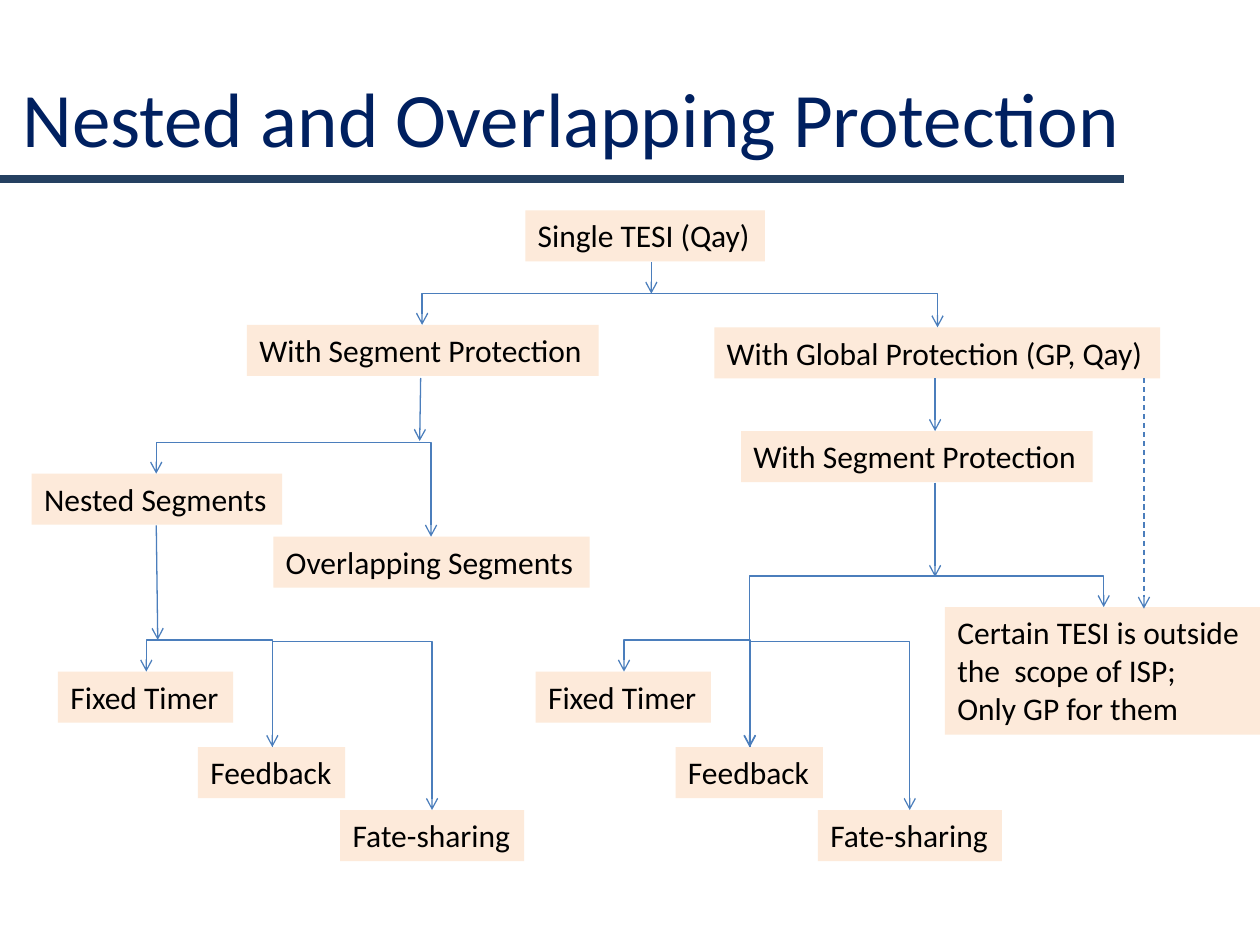
from lxml import etree
from pptx import Presentation
from pptx.dml.color import RGBColor
from pptx.enum.dml import MSO_LINE
from pptx.enum.shapes import MSO_CONNECTOR
from pptx.enum.text import MSO_ANCHOR, MSO_AUTO_SIZE, PP_ALIGN
from pptx.oxml.ns import qn
from pptx.util import Cm, Pt

STRAIGHT, ELBOW = MSO_CONNECTOR.STRAIGHT, MSO_CONNECTOR.ELBOW
LEFT, MIDDLE = PP_ALIGN.LEFT, MSO_ANCHOR.MIDDLE
FIT_SHAPE, DASH = MSO_AUTO_SIZE.SHAPE_TO_FIT_TEXT, MSO_LINE.DASH

NAVY = RGBColor(0x00, 0x20, 0x60)
RULE_BLUE = RGBColor(0x25, 0x40, 0x61)
ARROW_BLUE = RGBColor(0x4B, 0x7E, 0xBC)
PEACH = RGBColor(0xFD, 0xEA, 0xDA)
BLACK = RGBColor(0, 0, 0)

TITLE_FONT = {"name": "Calibri", "size": Pt(44)}
LABEL_FONT = {"name": "Calibri", "size": Pt(18)}
LABEL_HEIGHT = 1.03
BRANCH_SHIFT = 9.63  # from the left group of mechanisms to the right one

# Text, left, top, width in cm
LABELS = [
    ("Single TESI (Qay)", 10.59, 4.24, 4.83),
    ("With Segment Protection", 4.98, 6.55, 7.09),
    ("With Global Protection (GP, Qay)", 14.4, 6.6, 8.99),
    ("Nested Segments", 0.64, 9.55, 5.05),
    ("With Segment Protection", 14.94, 8.69, 7.09),
    ("Overlapping Segments", 5.51, 10.82, 6.38),
]
MECHANISMS = [
    ("Fixed Timer", 1.17, 13.54, 3.53),
    ("Feedback", 3.99, 15.06, 2.97),
    ("Fate-sharing", 6.86, 16.33, 3.71),
]
OUT_OF_SCOPE = "Certain TESI is outside\nthe  scope of ISP;\nOnly GP for them"

# Start x, start y, end x, end y in cm
ARROWS = [
    (13.13, 5.28, 13.13, 5.92),
    (8.48, 7.62, 8.46, 8.89),
    (18.85, 7.62, 18.85, 8.69),
    (3.15, 10.59, 3.18, 12.9),
    (18.85, 9.73, 18.85, 11.63),
]
GP_ONLY_ARROW = (23.06, 7.62, 23.06, 12.27)
# Start x, start y, end x, end y, height of the crossbar in cm
FORKS = [
    (8.51, 6.55, 18.9, 6.6, 5.92),
    (3.15, 9.55, 8.69, 10.82, 8.92),
    (15.11, 15.06, 22.25, 12.24, 11.61),
]


def apply_font(font, settings, color):
    for attribute, value in settings.items():
        setattr(font, attribute, value)
    font.color.rgb = color


def add_title(slide, text):
    title = slide.shapes.title
    place = {"left": Cm(0.2), "top": Cm(0.76), "width": Cm(22.86), "height": Cm(3.18)}
    for attribute, value in place.items():
        setattr(title, attribute, value)
    title.text_frame.text = text
    title.text_frame.vertical_anchor = MIDDLE
    heading = title.text_frame.paragraphs[0]
    heading.alignment = LEFT
    apply_font(heading.font, TITLE_FONT, NAVY)


def add_label(slide, text, left, top, width, height=LABEL_HEIGHT):
    label = slide.shapes.add_textbox(Cm(left), Cm(top), Cm(width), Cm(height))
    label.fill.solid()
    label.fill.fore_color.rgb = PEACH
    frame = label.text_frame
    frame.text = text
    frame.word_wrap = False
    frame.auto_size = FIT_SHAPE
    for paragraph in frame.paragraphs:
        apply_font(paragraph.font, LABEL_FONT, BLACK)


def add_line(slide, kind, x1, y1, x2, y2, color=ARROW_BLUE, width=0.75, ends=()):
    line = slide.shapes.add_connector(kind, Cm(x1), Cm(y1), Cm(x2), Cm(y2))
    line.line.color.rgb = color
    line.line.width = Pt(width)
    outline = line.line._get_or_add_ln()
    for end in ends:
        etree.SubElement(outline, qn(f"a:{end}"), type="arrow")
    etree.SubElement(line._element.spPr, qn("a:effectLst"))
    return line


def add_arrow(slide, x1, y1, x2, y2):
    return add_line(slide, STRAIGHT, x1, y1, x2, y2, ends=("tailEnd",))


def add_fork(slide, x1, y1, x2, y2, bar, ends=("headEnd", "tailEnd")):
    """Up from the left end, along the crossbar, down to the right end."""
    fork = add_line(slide, ELBOW, x1, y1, x2, y2, ends=ends)
    # The preset runs sideways, so it is turned a quarter about its centre
    run, rise = x2 - x1, abs(y2 - y1)
    fork.left, fork.top = Cm((x1 + x2 - rise) / 2), Cm((y1 + y2 - run) / 2)
    fork.width, fork.height = Cm(rise), Cm(run)
    upward = y2 < y1
    frame = fork._element.spPr.find(qn("a:xfrm"))
    frame.set("rot", str((90 if upward else 270) * 60000))
    frame.set("flipH", "1")
    frame.set("flipV", "1" if upward else "0")
    bend = round((bar - y1) / (y2 - y1) * 100000)
    guides = fork._element.spPr.find(qn("a:prstGeom")).find(qn("a:avLst"))
    etree.SubElement(guides, qn("a:gd"), name="adj1", fmla=f"val {bend}")


def add_mechanisms(slide, shift):
    for text, left, top, width in MECHANISMS:
        add_label(slide, text, left + shift, top, width)
    timer, feedback, fate = (x + shift for x in (2.95, 5.49, 8.71))
    add_fork(slide, timer, 13.54, feedback, 15.06, 12.9)
    add_fork(slide, feedback, 15.06, fate, 16.33, 12.93, ends=("tailEnd",))


def main():
    prs = Presentation()
    prs.slide_width, prs.slide_height = Cm(25.4), Cm(19.05)
    slide = prs.slides.add_slide(prs.slide_layouts[5])

    # Heading and rule
    add_title(slide, "Nested and Overlapping Protection")
    add_line(slide, STRAIGHT, 0, 3.61, 22.66, 3.61, RULE_BLUE, 4.5)

    # Protection choices
    for label in LABELS:
        add_label(slide, *label)
    add_label(slide, OUT_OF_SCOPE, 19.05, 12.24, 6.4, 2.57)

    # Recovery mechanisms under each branch
    for shift in (0, BRANCH_SHIFT):
        add_mechanisms(slide, shift)

    # Connections
    for fork in FORKS:
        add_fork(slide, *fork)
    for arrow in ARROWS:
        add_arrow(slide, *arrow)
    add_arrow(slide, *GP_ONLY_ARROW).line.dash_style = DASH

    prs.save("out.pptx")


if __name__ == "__main__":
    main()
